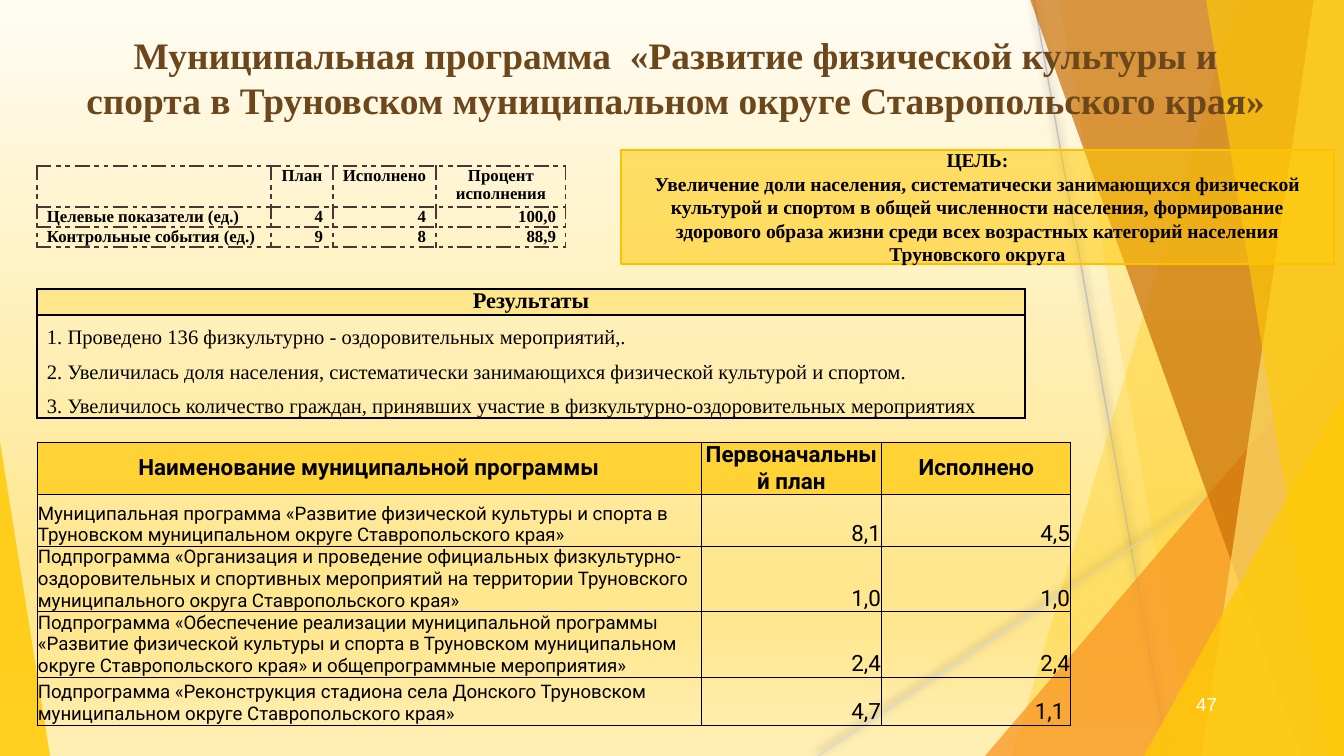
from lxml import etree
from pptx import Presentation
from pptx.dml.color import RGBColor
from pptx.enum.shapes import MSO_CONNECTOR, MSO_SHAPE
from pptx.enum.text import MSO_ANCHOR, MSO_AUTO_SIZE, PP_ALIGN
from pptx.oxml.ns import qn
from pptx.util import Pt

WIDTH, HEIGHT = 1344, 756
PX = 9144000 / WIDTH
LEFT, CENTER, RIGHT, JUSTIFY = PP_ALIGN.LEFT, PP_ALIGN.CENTER, PP_ALIGN.RIGHT, PP_ALIGN.JUSTIFY
TOP, MIDDLE, BOTTOM = MSO_ANCHOR.TOP, MSO_ANCHOR.MIDDLE, MSO_ANCHOR.BOTTOM
NO_AUTOFIT = MSO_AUTO_SIZE.NONE
RECTANGLE, TRIANGLE = MSO_SHAPE.RECTANGLE, MSO_SHAPE.ISOSCELES_TRIANGLE
STRAIGHT = MSO_CONNECTOR.STRAIGHT
COLORS = {
    "black": "000000", "white": "FFFFFF", "brown": "6B471B", "gold": "FFCA08",
    "pale": "FFDF6B", "orange": "F8931D", "rust": "CA6F06", "frame": "FFC000",
    "dash": "4F3434", "gray": "BFBFBF", "silver": "D9D9D9",
}
BACKDROP = [(0, "FFFCF3"), (74, "FFE790"), (83, "FFE790"), (100, "FFEFB5")]
SERIF, ROBOTO, ARIAL = "Times New Roman", "Roboto", "Arial"
RAYS = [((1034, 0, 1168, 756), "gray"), ((1344, 406, 818, 756), "silver")]
FACETS = [
    ([(1238, -1), (1344, -1), (1344, 756), (1012, 756)], "gold", 30),
    ([(1059, -1), (1344, -1), (1344, 756), (1192, 756)], "gold", 20),
    ((985, 336, 359, 420, 1), "orange", 72),
    ([(1030, -1), (1344, -1), (1344, 756), (1301, 756)], "rust", 70),
    ([(1314, -1), (1344, -1), (1344, 756), (1202, 756)], "pale", 70),
    ([(1206, -1), (1344, -1), (1344, 756), (1328, 756)], "gold", 65),
    ((1144, 395, 200, 361, 1), "gold", 80),
    ((0, 442, 50, 314, 0), "gold", 85),
]
TITLE = ("Муниципальная программа  «Развитие физической культуры и спорта "
         "в Труновском муниципальном округе Ставропольского края»")
GOAL = ["ЦЕЛЬ:", "Увеличение доли населения, систематически занимающихся физической "
        "культурой и спортом в общей численности населения, формирование здорового "
        "образа жизни среди всех возрастных категорий населения Труновского округа"]
INDICATORS = [
    ["", "План", "Исполнено", "Процент\nисполнения"],
    ["Целевые показатели (ед.)", "4", "4", "100,0"],
    ["Контрольные события (ед.)", "9", "8", "88,9"],
]
RESULTS = [
    "1. Проведено 136 физкультурно - оздоровительных мероприятий,.",
    "2. Увеличилась доля населения, систематически занимающихся физической культурой и спортом.",
    "3. Увеличилось количество граждан, принявших участие в физкультурно-оздоровительных мероприятиях",
]
FUNDING = [
    ["Наименование муниципальной программы", "Первоначальный план", "Исполнено"],
    ["Муниципальная программа «Развитие физической культуры и спорта в Труновском "
     "муниципальном округе Ставропольского края»", "8,1", "4,5"],
    ["Подпрограмма «Организация и проведение официальных физкультурно-оздоровительных "
     "и спортивных мероприятий на территории Труновского муниципального округа "
     "Ставропольского края»", "1,0", "1,0"],
    ["Подпрограмма «Обеспечение реализации муниципальной программы «Развитие физической "
     "культуры и спорта в Труновском муниципальном округе Ставропольского края» "
     "и общепрограммные мероприятия»", "2,4", "2,4"],
    ["Подпрограмма «Реконструкция стадиона села Донского Труновском муниципальном "
     "округе Ставропольского края»", "4,7", "1,1 "],
]


def px(*lengths):
    """Turn pixel lengths into EMU."""
    return [round(length * PX) for length in lengths]


def child(parent, tag, **attributes):
    """Append a drawing element to its parent."""
    return etree.SubElement(parent, qn(f"a:{tag}"), {k: str(v) for k, v in attributes.items()})


def apply(target, **values):
    """Set every given attribute on the target."""
    for key, value in values.items():
        setattr(target, key, value)


def paint(part, color, opacity):
    """Give a shape or cell a partly transparent solid fill."""
    part.fill.solid()
    part.fill.fore_color.rgb = RGBColor.from_string(COLORS[color])
    properties = part._element.spPr if hasattr(part, "shadow") else part._tc.tcPr
    child(properties.find(f"{qn('a:solidFill')}/{qn('a:srgbClr')}"), "alpha", val=opacity * 1000)


def write(frame, lines, align, font, size, bold=False, color="black", spacing=None):
    """Write one formatted paragraph per line."""
    for index, line in enumerate(lines):
        paragraph = frame.add_paragraph() if index else frame.paragraphs[0]
        apply(paragraph, alignment=align, line_spacing=spacing)
        run = paragraph.add_run()
        run.text = line
        apply(run.font, name=font, size=Pt(size), bold=bold)
        run.font.color.rgb = RGBColor.from_string(COLORS[color])


def draw_backdrop(slide):
    """Fill the background with the vertical gradient."""
    fill = slide.background.fill
    fill.gradient()
    fill.gradient_angle = 270
    stops = slide.background._cSld.find(f".//{qn('a:gsLst')}")
    for stop in list(stops):
        stops.remove(stop)
    for position, color in BACKDROP:
        child(child(stops, "gs", pos=position * 1000), "srgbClr", val=color)


def draw_facets(shapes):
    """Draw the shadowed rays and translucent facets."""
    for ends, color in RAYS:
        ray = shapes.add_connector(STRAIGHT, *px(*ends))
        ray.line.color.rgb = RGBColor.from_string(COLORS[color])
        ray.line.width = Pt(0.75)
        effects = child(ray._element.spPr, "effectLst")
        shadow = child(effects, "outerShdw", blurRad=Pt(5), dist=Pt(2), dir=245 * 60000)
        child(child(shadow, "srgbClr", val=COLORS["black"]), "alpha", val=50000)
    for outline, color, opacity in FACETS:
        if isinstance(outline, list):
            builder = shapes.build_freeform(*outline[0], scale=PX)
            builder.add_line_segments(outline[1:], close=True)
            facet = builder.convert_to_shape()
        else:
            facet = shapes.add_shape(TRIANGLE, *px(*outline[:4]))
            facet.adjustments[0] = outline[4]
        facet.shadow.inherit = False
        paint(facet, color, opacity)
        facet.line.fill.background()


def place_title(shapes, box):
    """Place the title placeholder in front of the facets."""
    title = shapes.title
    shapes._spTree.append(title._element)
    apply(title, **dict(zip(("left", "top", "width", "height"), px(*box))))
    apply(title.text_frame, word_wrap=True, auto_size=NO_AUTOFIT, vertical_anchor=MIDDLE)
    write(title.text_frame, [TITLE], CENTER, SERIF, 20, True, "brown")


def add_grid(shapes, x, y, columns, rows, border):
    """Add a plain table with the given column widths and row heights."""
    table = shapes.add_table(len(rows), len(columns),
                             *px(x, y, sum(columns), sum(rows))).table
    apply(table, first_row=False, horz_banding=False)
    for column, width in zip(table.columns, px(*columns)):
        column.width = width
    for row, height in zip(table.rows, px(*rows)):
        row.height = height
    color, weight, dash = border
    for cell in table.iter_cells():
        properties = cell._tc.get_or_add_tcPr()
        for side in ("lnL", "lnR", "lnT", "lnB"):
            edge = child(properties, side, w=Pt(weight))
            child(child(edge, "solidFill"), "srgbClr", val=COLORS[color])
            child(edge, "prstDash", val=dash)
        cell.fill.background()
    return table


def set_cell(cell, lines, inset, anchor, *style, **options):
    """Set the margins, anchor and text of a cell."""
    side = px(inset)[0]
    apply(cell, margin_left=side, margin_right=side, margin_top=0, margin_bottom=0,
          vertical_anchor=anchor)
    if any(lines):
        write(cell.text_frame, lines, *style, **options)


def place_indicators(shapes, x, y):
    """Place the table of planned and achieved indicators."""
    table = add_grid(shapes, x, y, [234, 62, 103, 130], [40, 20, 20],
                     ("dash", 0.75, "sysDashDotDot"))
    for r, row in enumerate(INDICATORS):
        for c, text in enumerate(row):
            align = CENTER if r == 0 else RIGHT if c else JUSTIFY
            set_cell(table.cell(r, c), text.split("\n"), 10, TOP, align, SERIF, 9, True)


def place_goal(shapes, box):
    """Place the framed programme goal."""
    goal = shapes.add_shape(RECTANGLE, *px(*box))
    goal.shadow.inherit = False
    paint(goal, "gold", 54)
    goal.line.color.rgb = RGBColor.from_string(COLORS["frame"])
    goal.line.width = Pt(1)
    apply(goal.text_frame, word_wrap=True, vertical_anchor=MIDDLE)
    write(goal.text_frame, GOAL, CENTER, SERIF, 10.5, True)


def place_results(shapes, x, y):
    """Place the headed list of results."""
    table = add_grid(shapes, x, y, [988], [26, 102], ("black", 1, "solid"))
    heading, findings = table.iter_cells()
    paint(heading, "pale", 60)
    set_cell(heading, ["Результаты"], 10, TOP, CENTER, SERIF, 12, True)
    set_cell(findings, RESULTS, 10, TOP, JUSTIFY, SERIF, 11, spacing=1.5)


def place_funding(shapes, x, y):
    """Place the table of planned and spent funding."""
    table = add_grid(shapes, x, y, [664, 181, 189], [48, 52, 60, 60, 48],
                     ("black", 0.5, "solid"))
    for r, row in enumerate(FUNDING):
        for c, text in enumerate(row):
            cell = table.cell(r, c)
            if r == 0:
                paint(cell, "gold", 70)
                set_cell(cell, [text], 1, MIDDLE, CENTER, ROBOTO, 12, True)
            else:
                align, size = (RIGHT, 12) if c else (LEFT, 10)
                set_cell(cell, [text], 1, BOTTOM, align, ROBOTO, size)


def place_page_number(shapes, box):
    """Place the page number."""
    frame = shapes.add_textbox(*px(*box)).text_frame
    apply(frame, word_wrap=True, vertical_anchor=MIDDLE)
    write(frame, ["47"], LEFT, ARIAL, 10, color="white")


def main():
    """Build and save the slide."""
    deck = Presentation()
    deck.slide_width, deck.slide_height = px(WIDTH, HEIGHT)
    slide = deck.slides.add_slide(deck.slide_layouts[5])
    shapes = slide.shapes
    draw_backdrop(slide)
    draw_facets(shapes)
    place_title(shapes, (67, 24, 1218, 106))
    place_funding(shapes, 37, 442)
    place_indicators(shapes, 37, 166)
    place_results(shapes, 37, 289)
    place_goal(shapes, (621, 150, 713, 114))
    place_page_number(shapes, (1183, 684, 75, 40))
    deck.save("out.pptx")


if __name__ == "__main__":
    main()
